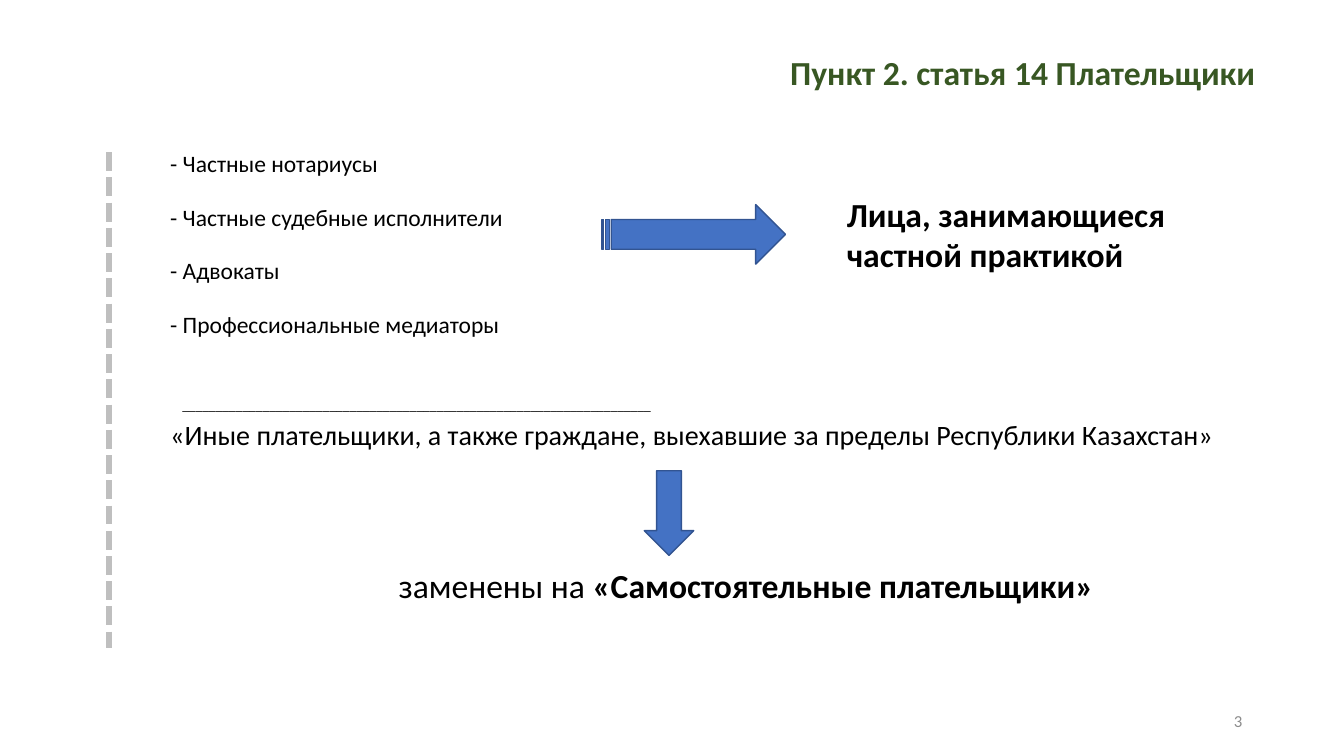
from dataclasses import dataclass

from lxml.etree import SubElement
from pptx import Presentation
from pptx.dml.color import RGBColor
from pptx.enum.dml import MSO_LINE_DASH_STYLE as Dash
from pptx.enum.shapes import MSO_CONNECTOR, MSO_SHAPE
from pptx.enum.text import MSO_ANCHOR as Anchor, PP_ALIGN as Align
from pptx.oxml.ns import qn
from pptx.util import Inches, Pt


@dataclass(frozen=True)
class Theme:
    font: str = "Calibri"
    ink: str = "000000"
    heading: str = "385723"
    muted: str = "8C8C8C"
    divider: str = "BFBFBF"
    arrow: str = "4472C4"
    arrow_edge: str = "325491"
    large: float = 24
    quote: float = 20
    item: float = 16.8
    number: float = 12
    rule: float = 9.6


THEME = Theme()
PAYERS = [
    "- Частные нотариусы",
    "- Частные судебные исполнители",
    "- Адвокаты",
    "- Профессиональные медиаторы",
]
QUOTE = "«Иные плательщики, а также граждане, выехавшие за пределы Республики Казахстан»"


def style_run(run, size, color=THEME.ink, bold=False):
    run.font.name = THEME.font
    run.font.size = Pt(size)
    run.font.bold = bold
    run.font.color.rgb = RGBColor.from_string(color)


def style_paragraph(paragraph, size, color=THEME.ink, bold=False, align=Align.LEFT):
    paragraph.alignment = align
    for run in paragraph.runs:
        style_run(run, size, color, bold)


def add_box(slide, left, top, width, height):
    box = slide.shapes.add_textbox(Inches(left), Inches(top), Inches(width), Inches(height))
    box.text_frame.word_wrap = True
    return box.text_frame


def add_label(slide, place, text, size, color=THEME.ink, bold=False,
              align=Align.LEFT, anchor=Anchor.TOP):
    frame = add_box(slide, *place)
    frame.vertical_anchor = anchor
    frame.text = text
    style_paragraph(frame.paragraphs[0], size, color, bold, align)


def set_title(slide, text):
    title = slide.shapes.title
    title.left, title.top = Inches(3.2), Inches(0.12)
    title.width, title.height = Inches(9.35), Inches(0.84)
    title.text_frame.text = text
    title.text_frame.vertical_anchor = Anchor.BOTTOM
    style_paragraph(title.text_frame.paragraphs[0], THEME.large, THEME.heading, True, Align.RIGHT)


def add_body(slide):
    frame = add_box(slide, 1.59, 1.51, 11.5, 4.76)
    rows = [(payer, THEME.item, 24 if index else 0) for index, payer in enumerate(PAYERS)]
    rows += [("_" * 70, THEME.rule, 46), (QUOTE, THEME.quote, 10), ("заменены на ", THEME.large, 90)]
    for index, (text, size, gap) in enumerate(rows):
        paragraph = frame.add_paragraph() if index else frame.paragraphs[0]
        paragraph.text = text
        paragraph.line_spacing = 0.7
        paragraph.space_before = Pt(gap)
        style_paragraph(paragraph, size)
    rule, replacement = frame.paragraphs[len(PAYERS)], frame.paragraphs[-1]
    for indented in (rule, replacement):
        indented._p.get_or_add_pPr().set("marL", str(Inches(0.12)))
    replacement.alignment = Align.CENTER
    new_name = replacement.add_run()
    new_name.text = "«Самостоятельные плательщики»"
    style_run(new_name, THEME.large, bold=True)


def add_arrow(slide, preset, left, top, width, height):
    arrow = slide.shapes.add_shape(preset, Inches(left), Inches(top), Inches(width), Inches(height))
    arrow.shadow.inherit = False
    arrow.fill.solid()
    arrow.fill.fore_color.rgb = RGBColor.from_string(THEME.arrow)
    arrow.line.color.rgb = RGBColor.from_string(THEME.arrow_edge)
    arrow.line.width = Pt(1)


def add_divider(slide, x, top, bottom):
    divider = slide.shapes.add_connector(
        MSO_CONNECTOR.STRAIGHT, Inches(x), Inches(top), Inches(x), Inches(bottom))
    divider.line.color.rgb = RGBColor.from_string(THEME.divider)
    divider.line.width = Pt(4.5)
    divider.line.dash_style = Dash.SQUARE_DOT
    SubElement(divider._element.spPr, qn("a:effectLst"))


def main():
    deck = Presentation()
    deck.slide_width, deck.slide_height = Inches(13.33), Inches(7.5)
    slide = deck.slides.add_slide(deck.slide_layouts.get_by_name("Title Only"))
    set_title(slide, "Пункт 2. статья 14 Плательщики")
    add_body(slide)
    add_divider(slide, 1.08, 1.51, 6.43)
    add_arrow(slide, MSO_SHAPE.STRIPED_RIGHT_ARROW, 5.97, 2.03, 1.82, 0.59)
    add_arrow(slide, MSO_SHAPE.DOWN_ARROW, 6.39, 4.67, 0.49, 0.84)
    add_label(slide, (8.3, 1.87, 4.42, 0.91), "Лица, занимающиеся\vчастной практикой",
              THEME.large, bold=True)
    add_label(slide, (9.42, 6.95, 3, 0.4), "3", THEME.number, THEME.muted,
              align=Align.RIGHT, anchor=Anchor.MIDDLE)
    deck.save("out.pptx")


if __name__ == "__main__":
    main()
